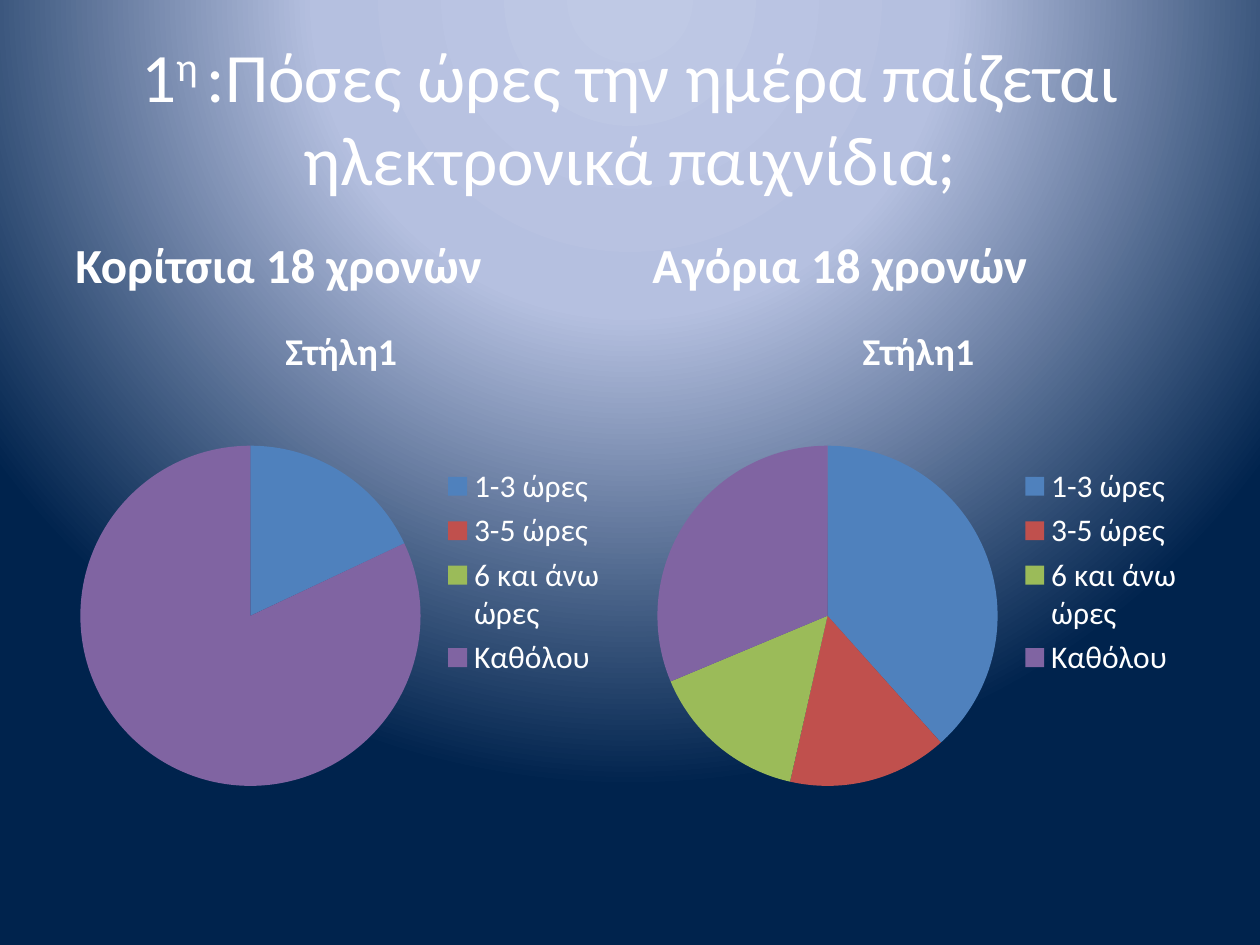
from dataclasses import dataclass

from lxml import etree
from pptx import Presentation
from pptx.chart.data import CategoryChartData
from pptx.dml.color import RGBColor
from pptx.enum.chart import XL_CHART_TYPE as ChartType, XL_LEGEND_POSITION as LegendPosition
from pptx.enum.text import MSO_ANCHOR as Anchor, PP_ALIGN as Align
from pptx.oxml.ns import qn
from pptx.util import Inches, Pt


@dataclass(frozen=True)
class Theme:
    font: str = "Calibri"
    text: str = "FFFFFF"
    slices: tuple = ("4F81BD", "C0504D", "9BBB59", "8064A2")
    glow: tuple = ((0, "BFC9E5"), (40, "B5C0E0"), (100, "00234D"))
    title_size: float = 39.6
    heading_size: float = 28
    chart_title_size: float = 21.6
    chart_size: float = 18


THEME = Theme()
CATEGORIES = ("1-3 ώρες", "3-5 ώρες", "6 και άνω ώρες", "Καθόλου")
SERIES = "Στήλη1"
GROUPS = (
    ("Κορίτσια 18 χρονών", (18, 0, 0, 82)),
    ("Αγόρια 18 χρονών", (38, 15, 15, 31)),
)
LEFT, COLUMN_STEP, COLUMN_WIDTH = 0.5, 4.58, 4.42


def style_font(font, size, bold=False):
    font.name = THEME.font
    font.size = Pt(size)
    font.bold = bold
    font.color.rgb = RGBColor.from_string(THEME.text)


def paint_background(page):
    """Fill the page with a round glow centred above its top edge."""
    fill = page.background.fill
    fill.gradient()
    grad = page.background._cSld.find(".//" + qn("a:gradFill"))
    for child in list(grad):
        grad.remove(child)
    stops = etree.SubElement(grad, qn("a:gsLst"))
    for position, color in THEME.glow:
        stop = etree.SubElement(stops, qn("a:gs"), pos=str(position * 1000))
        etree.SubElement(stop, qn("a:srgbClr"), val=color)
    circle = etree.SubElement(grad, qn("a:path"), path="circle")
    etree.SubElement(circle, qn("a:fillToRect"), l="50000", t="-80000", r="50000", b="180000")


def add_text(page, spans, left, top, width, height, *, size, bold=False,
             align=Align.LEFT, anchor=Anchor.MIDDLE):
    """Add one paragraph; each span is (text, baseline shift in percent)."""
    box = page.shapes.add_textbox(Inches(left), Inches(top), Inches(width), Inches(height))
    frame = box.text_frame
    frame.word_wrap = True
    frame.vertical_anchor = anchor
    para = frame.paragraphs[0]
    para.alignment = align
    for text, shift in spans:
        span = para.add_run()
        span.text = text
        style_font(span.font, size, bold)
        if shift:
            span.font._element.set("baseline", str(shift * 1000))


def add_pie(page, values, left, top, width, height):
    data = CategoryChartData()
    data.categories = CATEGORIES
    data.add_series(SERIES, values)
    chart = page.shapes.add_chart(ChartType.PIE, Inches(left), Inches(top),
                                  Inches(width), Inches(height), data).chart
    style_font(chart.font, THEME.chart_size)

    # Title and legend
    chart.has_title = True
    title = chart.chart_title.text_frame
    title.text = SERIES
    style_font(title.paragraphs[0].runs[0].font, THEME.chart_title_size, bold=True)
    chart.has_legend = True
    chart.legend.position = LegendPosition.RIGHT
    chart.legend.include_in_layout = False

    # Slices
    plot = chart.plots[0]
    plot.vary_by_categories = True
    for index, color in enumerate(THEME.slices):
        fill = plot.series[0].points[index].format.fill
        fill.solid()
        fill.fore_color.rgb = RGBColor.from_string(color)


def main():
    deck = Presentation()
    deck.slide_width, deck.slide_height = Inches(10), Inches(7.5)
    page = deck.slides.add_slide(deck.slide_layouts[6])
    paint_background(page)

    # Question
    question = (("1", 0), ("η ", 30),
                (":Πόσες ώρες την ημέρα παίζεται ηλεκτρονικά παιχνίδια;", 0))
    add_text(page, question, LEFT, 0.3, 9, 1.25, size=THEME.title_size, align=Align.CENTER)

    # One column per group
    for index, (heading, values) in enumerate(GROUPS):
        left = LEFT + index * COLUMN_STEP
        add_text(page, [(heading, 0)], left, 1.68, COLUMN_WIDTH, 0.7,
                 size=THEME.heading_size, bold=True, anchor=Anchor.BOTTOM)
        add_pie(page, values, left, 2.38, COLUMN_WIDTH, 4.32)

    deck.save("out.pptx")


if __name__ == "__main__":
    main()
